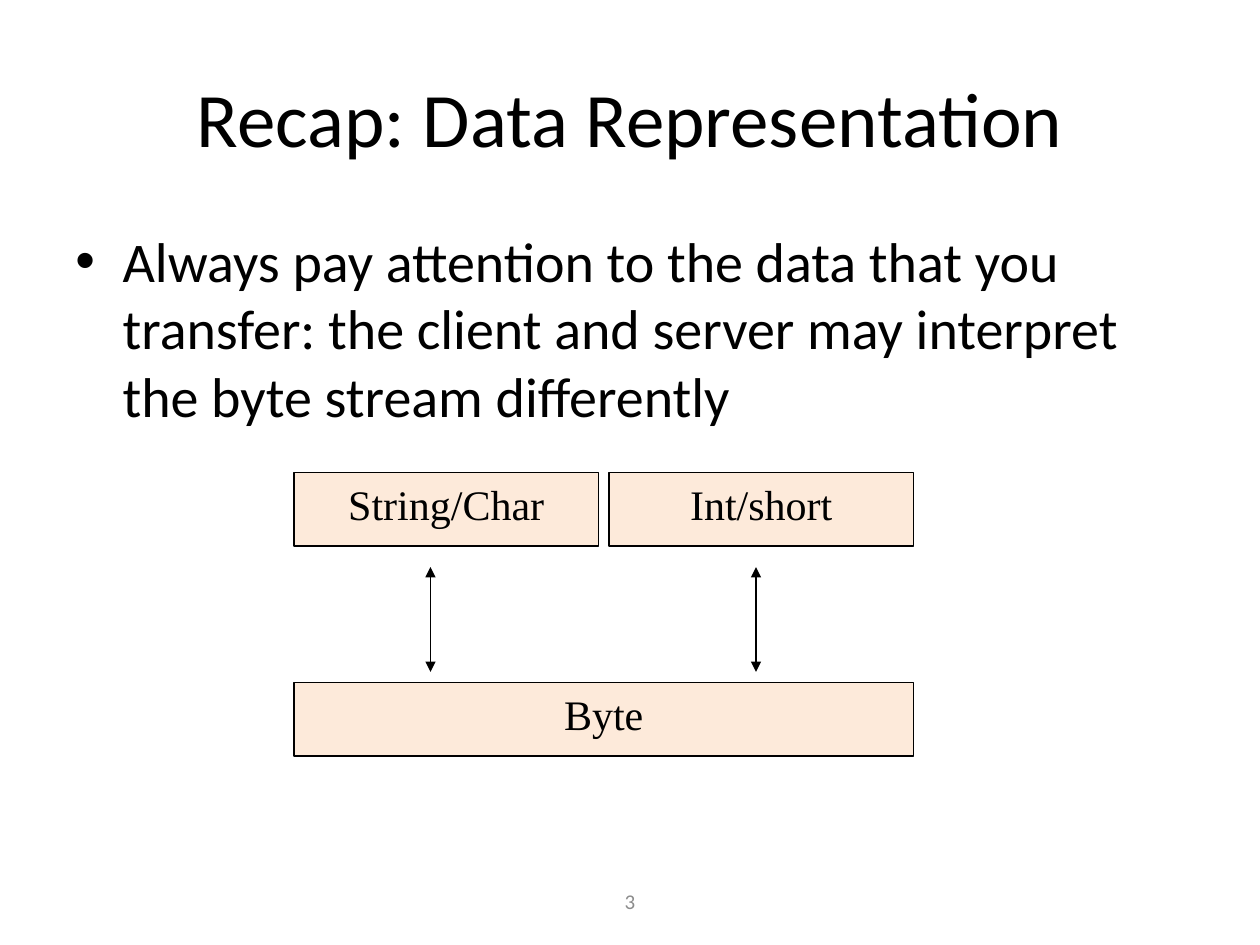
"""Build the data representation recap slide."""
from lxml.etree import SubElement
from pptx import Presentation
from pptx.dml.color import RGBColor
from pptx.enum.shapes import MSO_CONNECTOR as Connector, MSO_SHAPE as Shape
from pptx.enum.text import MSO_ANCHOR as Anchor, PP_ALIGN as Align
from pptx.oxml.ns import qn
from pptx.util import Pt

BLACK = RGBColor(0x00, 0x00, 0x00)
GRAY = RGBColor(0x8C, 0x8C, 0x8C)
PEACH = RGBColor(0xFD, 0xEA, 0xDA)
SANS, SERIF = "Calibri", "Times New Roman"

TITLE = "Recap: Data Representation"
ADVICE = ("Always pay attention to the data that you transfer: "
          "the client and server may interpret the byte stream differently")
PAGE_NUMBER = "3"
TYPES = ["String/Char", "Int/short"]
STORAGE = "Byte"

TYPE_WIDTH, TYPE_GAP, BOX_HEIGHT = 174, 6, 42
DIAGRAM_LEFT, TYPES_TOP, STORAGE_TOP = 168, 270, 390
DIAGRAM_WIDTH = len(TYPES) * (TYPE_WIDTH + TYPE_GAP) - TYPE_GAP
ARROW_XS, ARROW_TOP, ARROW_BOTTOM = [246, 432], 324, 384


def write(frame, text, size, font, color=BLACK, align=Align.CENTER, anchor=Anchor.TOP):
    frame.vertical_anchor = anchor
    paragraph = frame.paragraphs[0]
    paragraph.alignment = align
    run = paragraph.add_run()
    run.text = text
    run.font.size = Pt(size)
    run.font.name = font
    run.font.color.rgb = color
    return paragraph


def add_text(slide, area, *args, **style):
    frame = slide.shapes.add_textbox(*map(Pt, area)).text_frame
    frame.word_wrap = True
    return write(frame, *args, **style)


def add_bullet(paragraph, indent):
    props = paragraph._p.get_or_add_pPr()
    props.set("marL", str(Pt(indent)))
    props.set("indent", str(-Pt(indent)))
    SubElement(SubElement(props, qn("a:spcBef")), qn("a:spcPct"), val="20000")
    SubElement(props, qn("a:buFont"), typeface="Arial")
    SubElement(props, qn("a:buChar"), char="•")


def add_box(slide, text, left, top, width):
    box = slide.shapes.add_shape(Shape.RECTANGLE, *map(Pt, (left, top, width, BOX_HEIGHT)))
    box.shadow.inherit = False
    box.fill.solid()
    box.fill.fore_color.rgb = PEACH
    box.line.color.rgb = BLACK
    box.line.width = Pt(0.75)
    box.text_frame.word_wrap = False
    write(box.text_frame, text, 24, SERIF)


def add_double_arrow(slide, x):
    arrow = slide.shapes.add_connector(
        Connector.STRAIGHT, *map(Pt, (x, ARROW_TOP, x, ARROW_BOTTOM)))
    arrow.line.color.rgb = BLACK
    arrow.line.width = Pt(0.75)
    for end in ("a:headEnd", "a:tailEnd"):
        SubElement(arrow.line._get_or_add_ln(), qn(end), type="triangle")
    SubElement(arrow._element.spPr, qn("a:effectLst"))


def main():
    deck = Presentation()
    deck.slide_width, deck.slide_height = Pt(720), Pt(540)
    slide = deck.slides.add_slide(deck.slide_layouts[6])

    add_text(slide, (36, 21.6, 648, 90), TITLE, 44, SANS, anchor=Anchor.MIDDLE)
    advice = add_text(slide, (36, 126, 648, 356.4), ADVICE, 32, SANS, align=Align.LEFT)
    add_bullet(advice, 27)
    add_text(slide, (246, 500.4, 228, 28.8), PAGE_NUMBER, 12, SANS, GRAY,
             anchor=Anchor.MIDDLE)

    for column, data_type in enumerate(TYPES):
        left = DIAGRAM_LEFT + column * (TYPE_WIDTH + TYPE_GAP)
        add_box(slide, data_type, left, TYPES_TOP, TYPE_WIDTH)
    add_box(slide, STORAGE, DIAGRAM_LEFT, STORAGE_TOP, DIAGRAM_WIDTH)
    for x in ARROW_XS:
        add_double_arrow(slide, x)

    deck.save("out.pptx")


if __name__ == "__main__":
    main()
